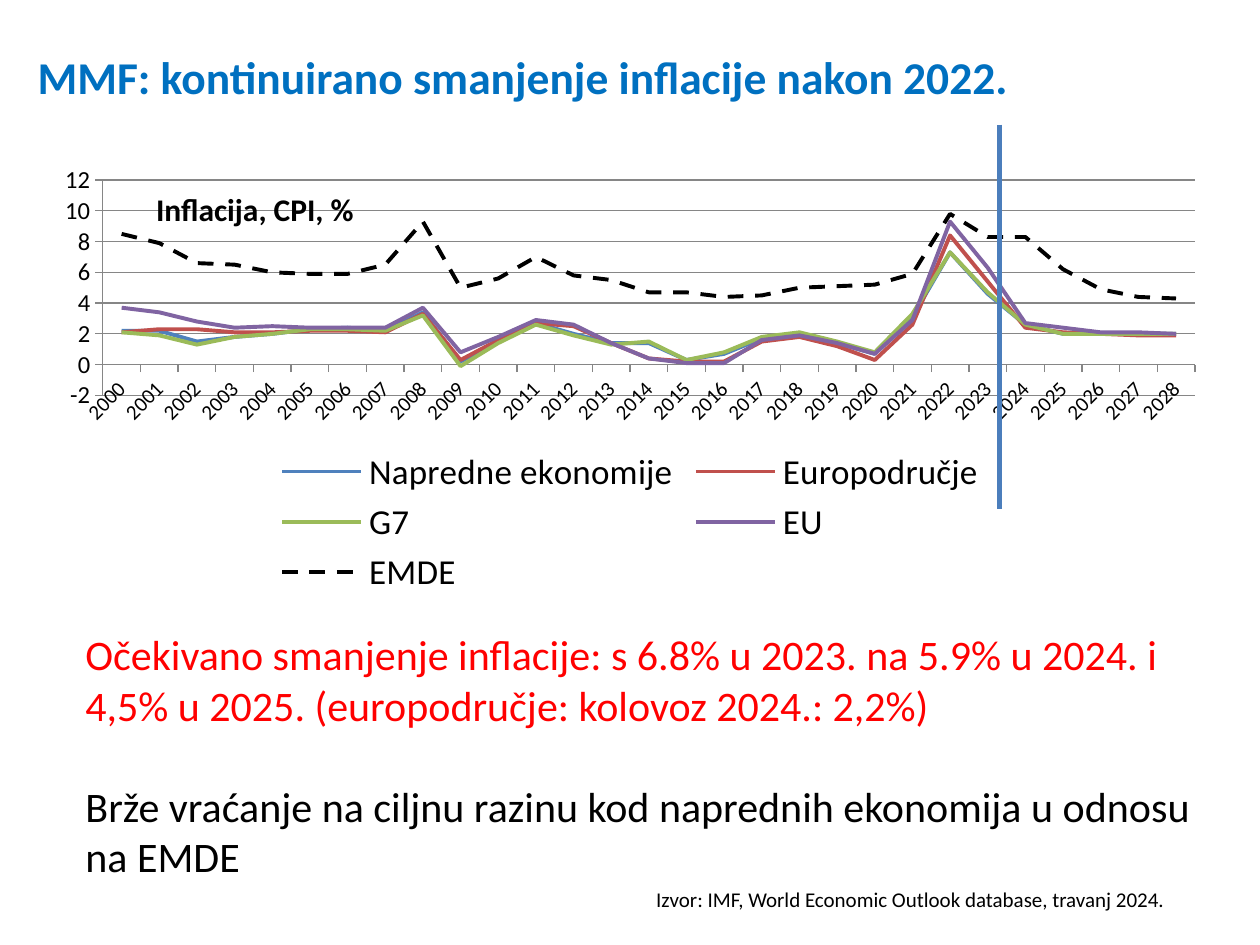
from lxml import etree
from pptx import Presentation
from pptx.chart.data import CategoryChartData
from pptx.dml.color import RGBColor
from pptx.enum.chart import XL_CHART_TYPE, XL_LEGEND_POSITION, XL_MARKER_STYLE, XL_TICK_MARK
from pptx.enum.dml import MSO_LINE
from pptx.enum.shapes import MSO_CONNECTOR
from pptx.enum.text import MSO_ANCHOR
from pptx.oxml.ns import qn
from pptx.util import Inches, Pt

LINE = XL_CHART_TYPE.LINE
BOTTOM = XL_LEGEND_POSITION.BOTTOM
PLAIN = XL_MARKER_STYLE.NONE
OUT = XL_TICK_MARK.OUTSIDE
NO_TICK = XL_TICK_MARK.NONE
DASH = MSO_LINE.DASH
STRAIGHT = MSO_CONNECTOR.STRAIGHT
MIDDLE = MSO_ANCHOR.MIDDLE
TOP = MSO_ANCHOR.TOP

FONT = "Calibri"
BLACK = "000000"
GRAY = "868686"
YEARS = [str(year) for year in range(2000, 2029)]
SERIES = [
    ("Napredne ekonomije", "4F81BD",
     [2.2, 2.2, 1.5, 1.8, 2, 2.3, 2.4, 2.2, 3.4, 0.2, 1.5, 2.7, 2, 1.4, 1.4,
      0.3, 0.7, 1.7, 2, 1.4, 0.7, 3.1, 7.3, 4.6, 2.6, 2, 2, 2, 2]),
    ("Europodručje", "C0504D",
     [2.1, 2.3, 2.3, 2.1, 2.1, 2.2, 2.2, 2.1, 3.3, 0.3, 1.6, 2.7, 2.5, 1.4, 0.4,
      0.2, 0.2, 1.5, 1.8, 1.2, 0.3, 2.6, 8.4, 5.4, 2.4, 2.1, 2, 1.9, 1.9]),
    ("G7", "9BBB59",
     [2.1, 1.9, 1.3, 1.8, 2, 2.3, 2.3, 2.2, 3.2, -0.1, 1.4, 2.6, 1.9, 1.3, 1.5,
      0.3, 0.8, 1.8, 2.1, 1.5, 0.8, 3.3, 7.3, 4.7, 2.6, 2, 2, 2, 2]),
    ("EU", "8064A2",
     [3.7, 3.4, 2.8, 2.4, 2.5, 2.4, 2.4, 2.4, 3.7, 0.8, 1.8, 2.9, 2.6, 1.4, 0.4,
      0.1, 0.1, 1.6, 1.9, 1.4, 0.7, 2.9, 9.3, 6.3, 2.7, 2.4, 2.1, 2.1, 2]),
    ("EMDE", BLACK,
     [8.5, 7.9, 6.6, 6.5, 6, 5.9, 5.9, 6.5, 9.3, 5, 5.6, 7, 5.8, 5.5, 4.7,
      4.7, 4.4, 4.5, 5, 5.1, 5.2, 5.9, 9.8, 8.3, 8.3, 6.2, 4.9, 4.4, 4.3]),
]
POINTS = [
    ("Očekivano smanjenje inflacije: s 6.8% u 2023. na 5.9% u 2024. i 4,5% u 2025. "
     "(europodručje: kolovoz 2024.: 2,2%)", "FF0000"),
    ("Brže vraćanje na ciljnu razinu kod naprednih ekonomija u odnosu na EMDE", BLACK),
]


def color(code):
    return RGBColor.from_string(code)


def style(font, size, code=BLACK, bold=False):
    font.name = FONT
    font.size = Pt(size)
    font.bold = bold
    font.color.rgb = color(code)


def stroke(line, code, width):
    line.color.rgb = color(code)
    line.width = Pt(width)


def add_text(slide, box, items, size, bold=False, anchor=TOP, gap=0):
    frame = slide.shapes.add_textbox(*map(Inches, box)).text_frame
    frame.word_wrap = True
    frame.vertical_anchor = anchor
    for index, (text, code) in enumerate(items):
        para = frame.add_paragraph() if index else frame.paragraphs[0]
        para.text = text
        style(para.font, size, code, bold)
        if index:
            para.space_before = Pt(gap)


def add_plot(slide, box):
    data = CategoryChartData()
    data.categories = YEARS
    for name, _, values in SERIES:
        data.add_series(name, values)
    chart = slide.shapes.add_chart(LINE, *map(Inches, box), data).chart
    style(chart.font, 10)
    chart.has_title = False
    chart.has_legend = True
    chart.legend.position = BOTTOM
    chart.legend.include_in_layout = False
    style(chart.legend.font, 20)
    chart.plots[0].vary_by_categories = False

    for series, (name, code, _) in zip(chart.plots[0].series, SERIES):
        series.smooth = False
        series.marker.style = PLAIN
        stroke(series.format.line, code, 2.25)
        if name == "EMDE":
            series.format.line.dash_style = DASH

    for axis, size in ((chart.category_axis, 12), (chart.value_axis, 14)):
        style(axis.tick_labels.font, size)
        axis.major_tick_mark = OUT
        axis.minor_tick_mark = NO_TICK
        stroke(axis.format.line, GRAY, 0.75)
    labels = chart.category_axis._element.find(qn("c:txPr"))
    labels.find(qn("a:bodyPr")).set("rot", "-2700000")

    scale = chart.value_axis
    scale.minimum_scale = -2
    scale.maximum_scale = 12
    scale.major_unit = 2
    scale.has_major_gridlines = True
    stroke(scale.major_gridlines.format.line, GRAY, 0.75)


def add_split(slide, left, top, height):
    ends = map(Inches, (left, top, left, top + height))
    split = slide.shapes.add_connector(STRAIGHT, *ends)
    stroke(split.line, "4B7EBC", 3)
    etree.SubElement(split._element.spPr, qn("a:effectLst"))


def add_panel(slide, left, top, width, height):
    add_plot(slide, (left, top, width, height))
    add_text(slide, (left + 0.81, top + 0.22, 3.86, 0.4),
             [("Inflacija, CPI, %", BLACK)], 18, bold=True)
    add_split(slide, left + 7.6, top - 0.25, 3.05)


def main():
    deck = Presentation()
    deck.slide_width = Inches(10)
    deck.slide_height = Inches(7.5)
    slide = deck.slides.add_slide(deck.slide_layouts[6])
    add_text(slide, (0.2, 0.3, 9, 0.61),
             [("MMF: kontinuirano smanjenje inflacije nakon 2022.", "0070C0")],
             26, bold=True, anchor=MIDDLE)
    add_panel(slide, 0.33, 1.24, 9.34, 3.53)
    add_text(slide, (0.58, 4.94, 9.08, 2.12), POINTS, 24, gap=29)
    add_text(slide, (5.11, 6.99, 4.42, 0.3),
             [("Izvor: IMF, World Economic Outlook database, travanj 2024.", BLACK)], 12)
    deck.save("out.pptx")


if __name__ == "__main__":
    main()
